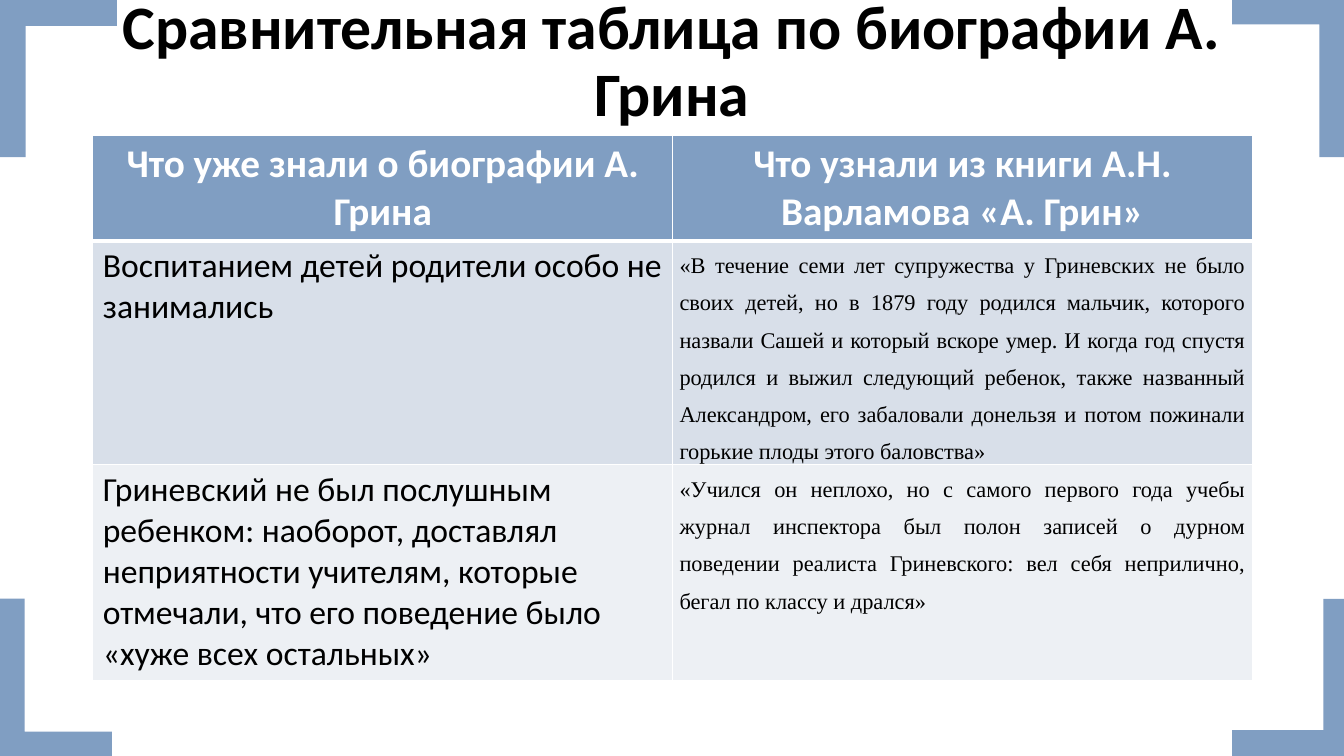
import lxml.etree
import pptx
import pptx.dml.color
import pptx.enum.shapes
import pptx.enum.text
import pptx.oxml.ns
import pptx.util

Inches = pptx.util.Inches
Pt = pptx.util.Pt
RGBColor = pptx.dml.color.RGBColor
Align = pptx.enum.text.PP_ALIGN
qn = pptx.oxml.ns.qn

BLUE = RGBColor(0x80, 0x9E, 0xC2)
PALE = RGBColor(0xD8, 0xDF, 0xE9)
LIGHT = RGBColor(0xED, 0xF0, 0xF4)
WHITE = RGBColor(0xFF, 0xFF, 0xFF)
BLACK = RGBColor(0, 0, 0)

TITLE = "Сравнительная таблица по биографии А. Грина"
HEADS = ("Что уже знали о биографии А. Грина", "Что узнали из книги А.Н. Варламова «А. Грин»")
FACTS = (
    (
        "Воспитанием детей родители особо не занимались",
        "«В течение семи лет супружества у Гриневских не было своих детей, "
        "но в 1879 году родился мальчик, которого назвали Сашей и который "
        "вскоре умер. И когда год спустя родился и выжил следующий ребенок, "
        "также названный Александром, его забаловали донельзя и потом "
        "пожинали горькие плоды этого баловства»",
    ),
    (
        "Гриневский не был послушным ребенком: наоборот, доставлял "
        "неприятности учителям, которые отмечали, что его поведение было "
        "«хуже всех остальных»",
        "«Учился он неплохо, но с самого первого года учебы журнал "
        "инспектора был полон записей о дурном поведении реалиста "
        "Гриневского: вел себя неприлично, бегал по классу и дрался»",
    ),
)
CORNERS = (
    (0, 5.94, 1.11, 1.56, 0),
    (12.22, 0, 1.11, 1.56, 180),
    (12.02, 6.14, 1.56, 1.16, 270),
    (-0.2, 0.2, 1.56, 1.16, 90),
)


def write(frame, text, size=24, face="Calibri", color=BLACK, bold=False,
          align=Align.LEFT, line=1.0, after=0):
    frame.word_wrap = True
    para = frame.paragraphs[0]
    para.alignment = align
    para.line_spacing = line
    para.space_before = Pt(0)
    para.space_after = Pt(after)
    run = para.add_run()
    run.text = text
    font = run.font
    font.size = Pt(size)
    font.name = face
    font.bold = bold
    font.color.rgb = color


class Deck:
    head = dict(size=28, color=WHITE, bold=True, align=Align.CENTER)
    note = dict(size=24)
    quote = dict(size=16, face="Times New Roman", align=Align.JUSTIFY, line=1.5, after=8)

    def __init__(self):
        self.show = pptx.Presentation()
        self.show.slide_width = Inches(13.33)
        self.show.slide_height = Inches(7.5)
        self.slide = self.show.slides.add_slide(self.show.slide_layouts[5])

    def corner(self, left, top, width, height, turn):
        shape = self.slide.shapes.add_shape(
            pptx.enum.shapes.MSO_SHAPE.RECTANGLE,
            Inches(left), Inches(top), Inches(width), Inches(height))
        form = shape._element.spPr.find(qn("a:prstGeom"))
        form.set("prst", "corner")
        guides = form.find(qn("a:avLst"))
        for name, value in (("adj1", 21800), ("adj2", 22100)):
            lxml.etree.SubElement(guides, qn("a:gd"), name=name, fmla=f"val {value}")
        shape.rotation = turn
        shape.shadow.inherit = False
        shape.fill.solid()
        shape.fill.fore_color.rgb = BLUE
        shape.line.fill.background()

    def title(self, text):
        shape = self.slide.shapes.title
        shape.left, shape.top = Inches(0.53), Inches(0.23)
        shape.width, shape.height = Inches(12.27), Inches(1.45)
        frame = shape.text_frame
        frame.auto_size = pptx.enum.text.MSO_AUTO_SIZE.NONE
        frame.vertical_anchor = pptx.enum.text.MSO_ANCHOR.MIDDLE
        frame.margin_bottom = Inches(0.71)
        write(frame, text, size=44.1, bold=True, align=Align.CENTER, line=0.9)

    def border(self, cell, side, width):
        edge = lxml.etree.SubElement(
            cell._tc.get_or_add_tcPr(), qn("a:" + side), w=str(int(Pt(width))))
        fill = lxml.etree.SubElement(edge, qn("a:solidFill"))
        lxml.etree.SubElement(fill, qn("a:srgbClr"), val=str(WHITE))

    def cell(self, cell, text, fill, style, edges):
        for side, width in zip(("lnL", "lnR", "lnT", "lnB"), edges):
            self.border(cell, side, width)
        cell.fill.solid()
        cell.fill.fore_color.rgb = fill
        if style is self.quote:
            cell.margin_left = cell.margin_right = Inches(0.07)
            cell.margin_top = cell.margin_bottom = 0
        write(cell.text_frame, text, **style)

    def table(self, heads, facts):
        highs = (1.04, 2.21, 2.14)
        grid = self.slide.shapes.add_table(
            len(highs), len(heads), Inches(0.92), Inches(1.34),
            Inches(11.5), Inches(sum(highs))).table
        for row, high in zip(grid.rows, highs):
            row.height = Inches(high)
        body = (self.note, self.quote)
        rows = (
            (heads, BLUE, (self.head, self.head), (1, 1, 1, 3)),
            (facts[0], PALE, body, (1, 1, 3, 1)),
            (facts[1], LIGHT, body, (1, 1, 1, 1)),
        )
        for y, (texts, fill, styles, edges) in enumerate(rows):
            for x, (text, style) in enumerate(zip(texts, styles)):
                self.cell(grid.cell(y, x), text, fill, style, edges)


def main():
    deck = Deck()
    for place in CORNERS:
        deck.corner(*place)
    deck.title(TITLE)
    deck.table(HEADS, FACTS)
    deck.show.save("out.pptx")


if __name__ == "__main__":
    main()
